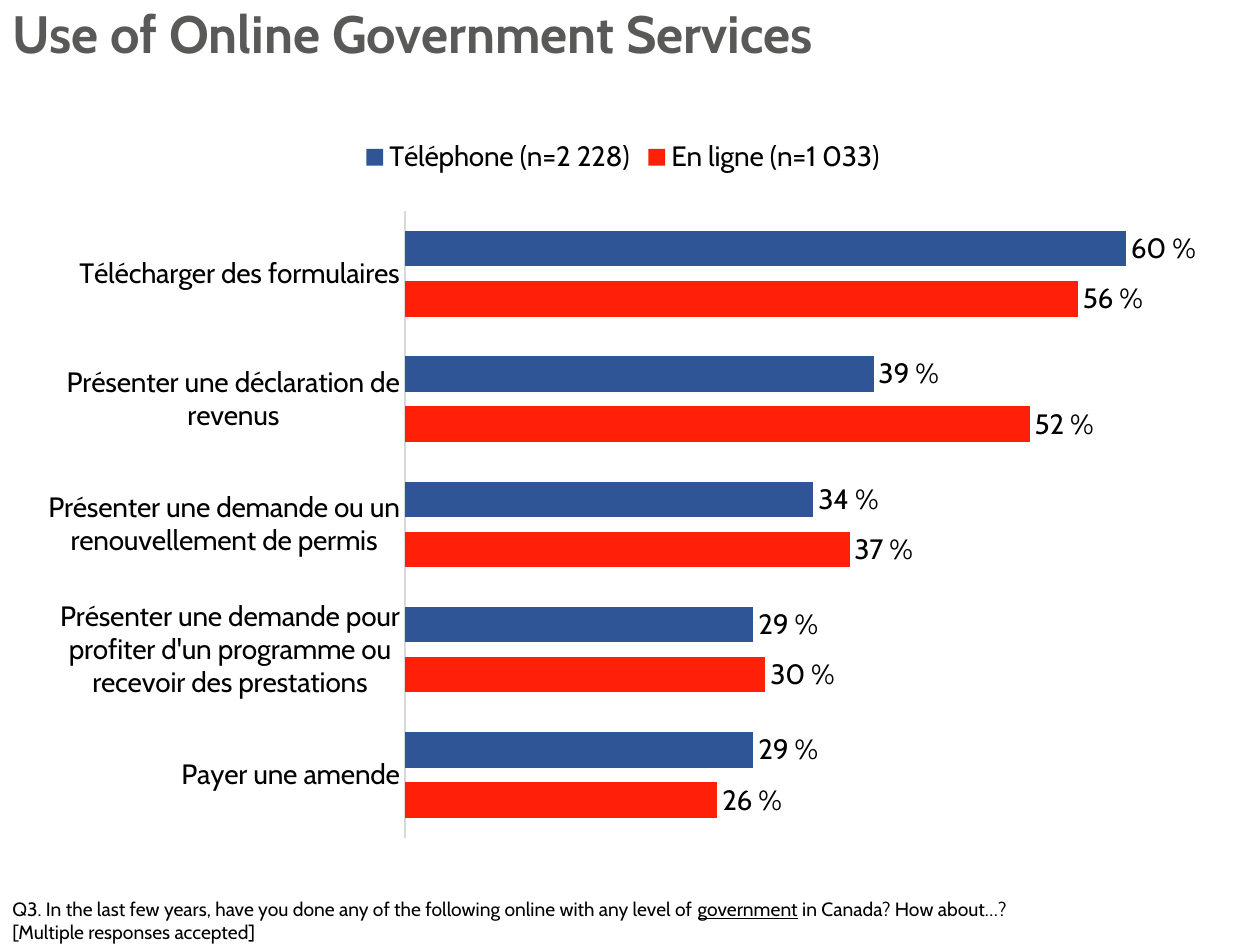
import pptx
import pptx.chart.data
import pptx.dml.color
import pptx.enum.chart
import pptx.enum.text
import pptx.util
from lxml import etree

RGBColor = pptx.dml.color.RGBColor
BLACK = RGBColor(0x00, 0x00, 0x00)
TITLE_GRAY = RGBColor(0x59, 0x59, 0x58)
AXIS_GRAY = RGBColor(0xD9, 0xD9, 0xD9)
RED = RGBColor(0xFF, 0x20, 0x07)
BLUE = RGBColor(0x2F, 0x55, 0x97)

FONT = "Cabin"
PERCENT = '0" %"'
CATEGORIES = [
    "Payer une amende",
    "Présenter une demande pour profiter d'un programme ou recevoir des prestations",
    "Présenter une demande ou un renouvellement de permis",
    "Présenter une déclaration de revenus",
    "Télécharger des formulaires",
]
SERIES = [
    ("En ligne (n=1 033)", (0.26, 0.30, 0.37, 0.52, 0.56), RED),
    ("Téléphone (n=2 228)", (0.29, 0.29, 0.34, 0.39, 0.60), BLUE),
]


def set_values(target, values):
    for name, value in values.items():
        setattr(target, name, value)


def format_font(font, size, color=BLACK, bold=False):
    set_values(font, {"name": FONT, "size": pptx.util.Pt(size), "bold": bold})
    font.color.rgb = color


presentation = pptx.Presentation()
set_values(presentation, {"slide_width": pptx.util.Inches(10),
                          "slide_height": pptx.util.Inches(7.5)})
width, height = presentation.slide_width, presentation.slide_height
slide = presentation.slides.add_slide(presentation.slide_layouts[5])

# Title
title = slide.shapes.title
set_values(title, {"left": 0, "top": int(height * 0.004),
                   "width": width, "height": int(height * 0.07)})
title.text_frame.text = "Use of Online Government Services"
set_values(title.text_frame, {"vertical_anchor": pptx.enum.text.MSO_ANCHOR.MIDDLE,
                              "auto_size": pptx.enum.text.MSO_AUTO_SIZE.NONE,
                              "word_wrap": True})
paragraph = title.text_frame.paragraphs[0]
set_values(paragraph, {"alignment": pptx.enum.text.PP_ALIGN.LEFT, "line_spacing": 0.9})
format_font(paragraph.runs[0].font, 30, TITLE_GRAY, bold=True)

# Bar chart
chart_data = pptx.chart.data.CategoryChartData(number_format="0%")
chart_data.categories = CATEGORIES
for name, values, color in SERIES:
    chart_data.add_series(name, values)
chart = slide.shapes.add_chart(
    pptx.enum.chart.XL_CHART_TYPE.BAR_CLUSTERED,
    0, int(height * 2 / 15), int(width * 0.989), int(height * 0.757), chart_data).chart
format_font(chart.font, 16)
set_values(chart, {"has_title": False, "has_legend": True})
set_values(chart.legend, {"position": pptx.enum.chart.XL_LEGEND_POSITION.TOP,
                          "include_in_layout": False})
format_font(chart.legend.font, 16)

# Axes
category_axis = chart.category_axis
set_values(category_axis, {"major_tick_mark": pptx.enum.chart.XL_TICK_MARK.NONE,
                           "has_major_gridlines": False})
category_axis.format.line.color.rgb = AXIS_GRAY
category_axis.format.line.width = pptx.util.Pt(0.75)
format_font(category_axis.tick_labels.font, 16)
set_values(chart.value_axis, {"visible": False, "has_major_gridlines": False,
                              "minimum_scale": 0, "maximum_scale": 0.7})

# Bars and their labels
plot = chart.plots[0]
set_values(plot, {"gap_width": 112, "overlap": -42, "vary_by_categories": False})
for series, (name, values, color) in zip(plot.series, SERIES):
    series.format.fill.solid()
    series.format.fill.fore_color.rgb = color
    labels = series.data_labels
    set_values(labels, {"show_value": True, "number_format": "0 %",
                        "number_format_is_linked": False,
                        "position": pptx.enum.chart.XL_LABEL_POSITION.OUTSIDE_END})
    format_font(labels.font, 16)

# Plot area as shares of the chart's size
plot_area = plot._element.getparent()
namespace = etree.QName(plot_area).namespace
for old_layout in plot_area.findall(f"{{{namespace}}}layout"):
    plot_area.remove(old_layout)
layout = etree.Element(f"{{{namespace}}}layout")
manual = etree.SubElement(layout, f"{{{namespace}}}manualLayout")
for tag, value in (("layoutTarget", "inner"), ("xMode", "edge"), ("yMode", "edge"),
                   ("x", "0.325"), ("y", "0.119"), ("w", "0.675"), ("h", "0.876")):
    etree.SubElement(manual, f"{{{namespace}}}{tag}", val=value)
plot_area.insert(0, layout)

# Question wording
question = slide.shapes.add_textbox(0, int(height * 0.943), width, int(height * 0.065))
question.text_frame.word_wrap = True
QUESTION_LINES = [
    [("Q3. In the last few years, have you done any of the following online "
      "with any level of ", False), ("government", True),
     (" in Canada? How about…?", False)],
    [("[Multiple responses accepted]", False)],
]
for index, line in enumerate(QUESTION_LINES):
    frame = question.text_frame
    paragraph = frame.paragraphs[0] if index == 0 else frame.add_paragraph()
    for text, underlined in line:
        run = paragraph.add_run()
        run.text = text
        format_font(run.font, 11)
        run.font.underline = underlined

presentation.save("out.pptx")
